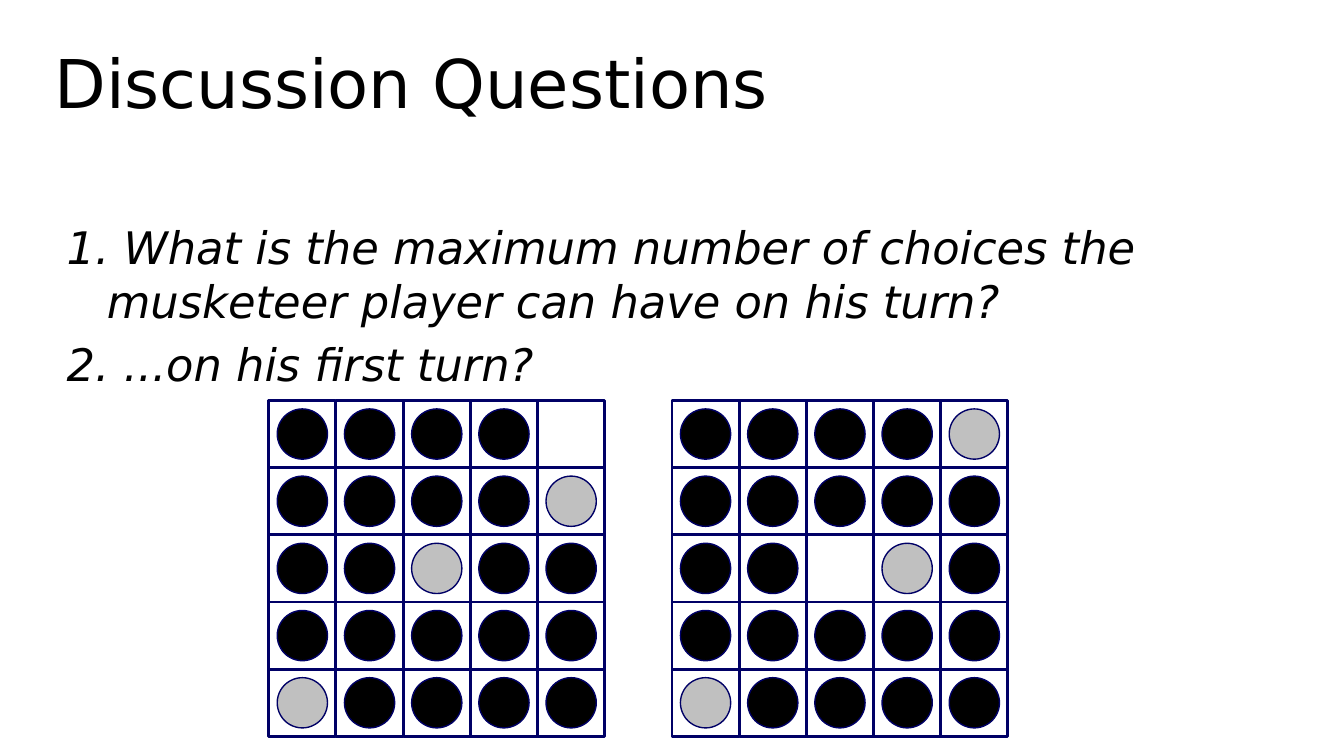
from pptx import Presentation
from pptx.dml.color import RGBColor
from pptx.enum.shapes import MSO_SHAPE as Shape
from pptx.enum.text import MSO_ANCHOR as Anchor, MSO_AUTO_SIZE as AutoSize, PP_ALIGN as Align
from pptx.oxml.ns import qn
from pptx.util import Cm, Pt

# Content: G = guard, M = musketeer, . = empty cell
TITLE = "Discussion Questions"
QUESTIONS = [
    "What is the maximum number of choices the musketeer player can have on his turn?",
    "...on his first turn?",
]
BOARDS = [
    ["GGGG.",
     "GGGGM",
     "GGMGG",
     "GGGGG",
     "MGGGG"],
    ["GGGGM",
     "GGGGG",
     "GG.MG",
     "GGGGG",
     "MGGGG"],
]

# Style
FONT = "DejaVu Sans"
BLACK = RGBColor(0x00, 0x00, 0x00)
GRAY = RGBColor(0xC0, 0xC0, 0xC0)
NAVY = RGBColor(0x00, 0x00, 0x66)
PIECE_COLORS = {"G": BLACK, "M": GRAY}

# Board geometry in centimetres
BOARDS_LEFT, BOARDS_TOP = 5.08, 7.57
BOARD_PITCH = 7.62
CELL, PIECE = 1.27, 0.95
MARGIN = (CELL - PIECE) / 2


def place_text(placeholder, left, top, width, height):
    placeholder.left, placeholder.top = Cm(left), Cm(top)
    placeholder.width, placeholder.height = Cm(width), Cm(height)
    frame = placeholder.text_frame
    frame.word_wrap = True
    frame.auto_size = AutoSize.NONE
    frame.vertical_anchor = Anchor.TOP
    frame.margin_left = frame.margin_right = Cm(0.19)
    frame.margin_top = frame.margin_bottom = Cm(0.2)
    return frame


def style_paragraph(paragraph, size, italic=False):
    paragraph.alignment = Align.LEFT
    font = paragraph.font
    font.name, font.size, font.italic = FONT, Pt(size), italic
    font.color.rgb = BLACK


def add_square(board, kind, left, top, side, line_width, color=None):
    square = board.shapes.add_shape(kind, Cm(left), Cm(top), Cm(side), Cm(side))
    square.shadow.inherit = False
    square.line.color.rgb = NAVY
    square.line.width = Pt(line_width)
    if color is None:
        square.fill.background()
    else:
        square.fill.solid()
        square.fill.fore_color.rgb = color


presentation = Presentation()
presentation.slide_width, presentation.slide_height = Cm(25.4), Cm(14.29)
slide = presentation.slides.add_slide(presentation.slide_layouts[1])

# Title
title = place_text(slide.shapes.title, 0.84, 0.58, 23.06, 3.02)
title.text = TITLE
style_paragraph(title.paragraphs[0], 36)

# Questions, each number followed by one en space
questions = place_text(slide.placeholders[1], 0.86, 3.96, 24.54, 7.62)
questions.text = "\n".join(f"{number}. {question}" for number, question in enumerate(QUESTIONS, 1))
for index, paragraph in enumerate(questions.paragraphs):
    properties = paragraph._p.get_or_add_pPr()
    properties.set("marL", str(Cm(0.97)))
    properties.set("indent", str(Cm(-0.76)))
    properties.append(properties.makeelement(qn("a:buNone"), {}))
    paragraph.space_before = Pt(4.8 if index else 0)
    style_paragraph(paragraph, 24, italic=True)

# Boards: cells first, pieces on top
for number, rows in enumerate(BOARDS):
    board = slide.shapes.add_group_shape()
    board_left = BOARDS_LEFT + number * BOARD_PITCH
    cells = [(board_left + column * CELL, BOARDS_TOP + row * CELL, piece)
             for row, pieces in enumerate(rows)
             for column, piece in enumerate(pieces)]
    for left, top, _ in cells:
        add_square(board, Shape.RECTANGLE, left, top, CELL, 1.5)
    for left, top, piece in cells:
        if piece in PIECE_COLORS:
            add_square(board, Shape.OVAL, left + MARGIN, top + MARGIN, PIECE, 0.75, PIECE_COLORS[piece])

presentation.save("out.pptx")
